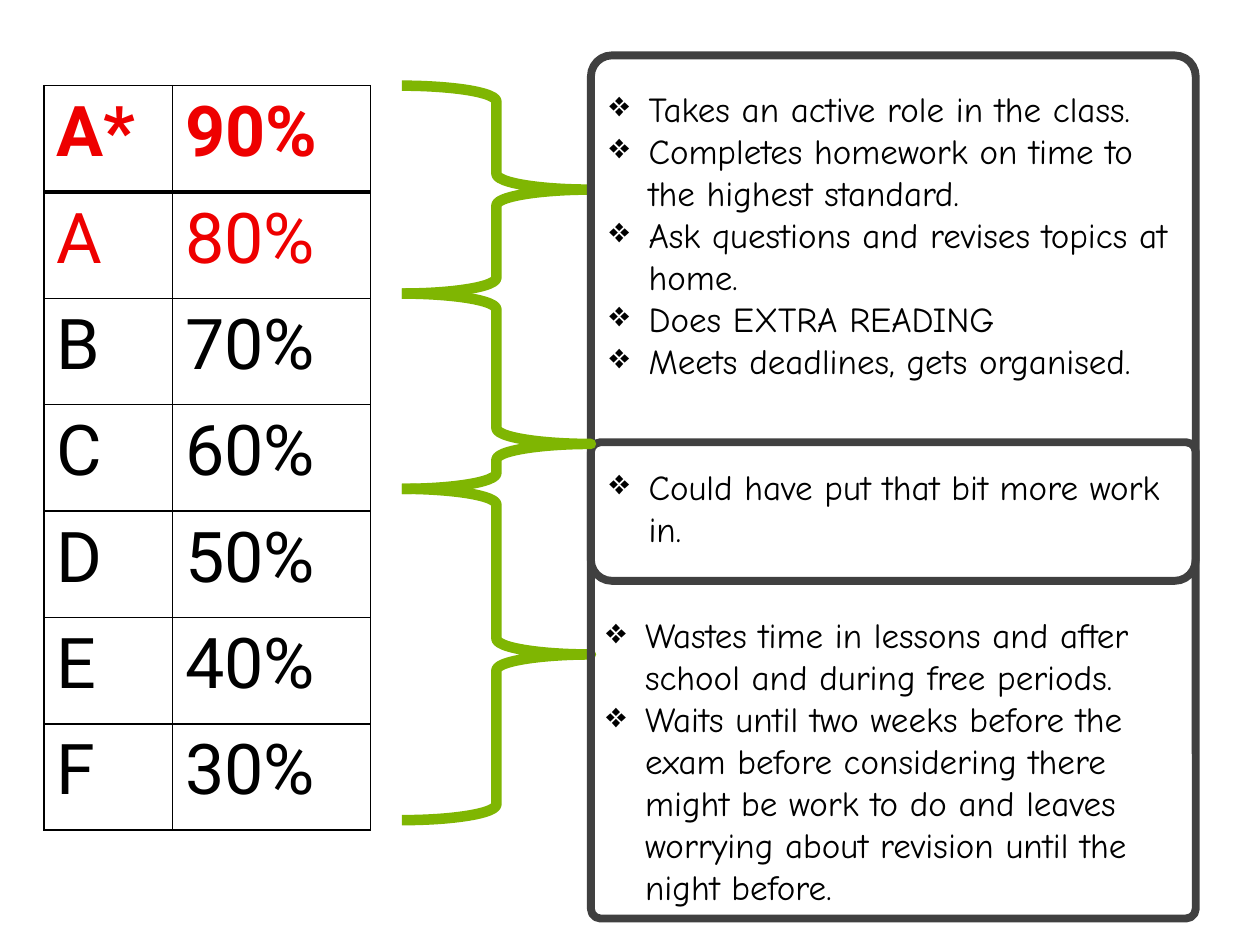
import dataclasses

import lxml.etree
import pptx
import pptx.dml.color
import pptx.enum.shapes
import pptx.enum.text
import pptx.oxml.ns
import pptx.util

Inches = pptx.util.Inches
Pt = pptx.util.Pt
MSO_SHAPE = pptx.enum.shapes.MSO_SHAPE
MSO_ANCHOR = pptx.enum.text.MSO_ANCHOR

BLACK, WHITE, RED = "000000", "FFFFFF", "EE0000"
GREEN, GREY = "7FB602", "404040"
BRACE_LEFT, BRACE_WIDTH = 3.19, 1.5
BOX_LEFT, BOX_WIDTH = 4.69, 4.8
BULLET_INDENT = 0.31


@dataclasses.dataclass
class Grade:
    letter: str
    percent: str
    color: str = BLACK
    bold: bool = False


@dataclasses.dataclass
class Brace:
    top: float
    height: float
    point: float = 0.5


@dataclasses.dataclass
class Advice:
    text: str
    space_before: float = 0


@dataclasses.dataclass
class Box:
    top: float
    height: float
    corner: float
    fill: str | None
    frame_format: dict
    advice: list[Advice]


GRADES = [
    Grade("A*", "90%", RED, True),
    Grade("A", "80%", RED),
    Grade("B", "70%"),
    Grade("C", "60%"),
    Grade("D", "50%"),
    Grade("E", "40%"),
    Grade("F", "30%"),
]
TOP_BRACE = Brace(0.68, 1.65)
MIDDLE_BRACE = Brace(2.33, 1.55, 0.77)
BOTTOM_BRACE = Brace(3.88, 2.63)
BOXES = [
    Box(0.44, 4.17, 0.04, WHITE, {"vertical_anchor": MSO_ANCHOR.MIDDLE}, [
        Advice("Takes an active role in the class."),
        Advice("Completes homework on time to the highest standard."),
        Advice("Ask questions and revises topics at home."),
        Advice("Does EXTRA READING"),
        Advice("Meets deadlines, gets organised."),
        Advice("Could have put that bit more work in.", 48),
    ]),
    Box(3.51, 3.78, 0.02, None,
        {"vertical_anchor": MSO_ANCHOR.TOP, "margin_top": Inches(1.34)}, [
            Advice("Wastes time in lessons and after school and during free periods."),
            Advice("Waits until two weeks before the exam before considering there "
                   "might be work to do and leaves worrying about revision until "
                   "the night before."),
        ]),
]


def rgb(color: str) -> pptx.dml.color.RGBColor:
    return pptx.dml.color.RGBColor.from_string(color)


def apply_format(target, values: dict) -> None:
    for name, value in values.items():
        setattr(target, name, value)


def add_text(paragraph, text: str, color: str, font_format: dict) -> None:
    run = paragraph.add_run()
    run.text = text
    apply_format(run.font, font_format)
    run.font.color.rgb = rgb(color)


def add_outlined_shape(slide, kind, left: float, top: float, width: float,
                       height: float, line_color: str, line_width: float):
    shape = slide.shapes.add_shape(
        kind, Inches(left), Inches(top), Inches(width), Inches(height))
    shape.shadow.inherit = False
    shape.fill.background()
    shape.line.color.rgb = rgb(line_color)
    shape.line.width = Pt(line_width)
    return shape


def add_cell_borders(cell, widths: dict[str, float]) -> None:
    properties = cell._tc.get_or_add_tcPr()
    for position, (side, width) in enumerate(widths.items()):
        line = lxml.etree.Element(pptx.oxml.ns.qn(f"a:ln{side}"), w=str(Pt(width)))
        fill = lxml.etree.SubElement(line, pptx.oxml.ns.qn("a:solidFill"))
        lxml.etree.SubElement(fill, pptx.oxml.ns.qn("a:srgbClr"), val=BLACK)
        properties.insert(position, line)


def add_grade_table(slide, grades: list[Grade]) -> None:
    widths = [1.02, 1.57]
    height = 5.91
    table = slide.shapes.add_table(
        len(grades), len(widths), Inches(0.35), Inches(0.68),
        Inches(sum(widths)), Inches(height)).table
    apply_format(table, {"first_row": False, "horz_banding": False})
    for column, width in zip(table.columns, widths):
        column.width = Inches(width)
    for index, grade in enumerate(grades):
        table.rows[index].height = Inches(height / len(grades))
        # The line under the top grade is heavier
        borders = {"L": 1, "R": 1, "T": 2 if index == 1 else 1,
                   "B": 2 if index == 0 else 1}
        for cell, text in zip(table.rows[index].cells, (grade.letter, grade.percent)):
            cell.fill.solid()
            cell.fill.fore_color.rgb = rgb(WHITE)
            add_cell_borders(cell, borders)
            add_text(cell.text_frame.paragraphs[0], text, grade.color,
                     {"name": "Roboto", "size": Pt(40), "bold": grade.bold})


def add_brace(slide, brace: Brace) -> None:
    shape = add_outlined_shape(slide, MSO_SHAPE.RIGHT_BRACE, BRACE_LEFT, brace.top,
                               BRACE_WIDTH, brace.height, GREEN, 6)
    shape.adjustments[1] = brace.point


def add_bullet(paragraph) -> None:
    properties = paragraph._p.get_or_add_pPr()
    properties.set("marL", str(Inches(BULLET_INDENT)))
    properties.set("indent", str(-Inches(BULLET_INDENT)))
    lxml.etree.SubElement(properties, pptx.oxml.ns.qn("a:buChar"), char="❖")


def add_advice_box(slide, box: Box) -> None:
    shape = add_outlined_shape(slide, MSO_SHAPE.ROUNDED_RECTANGLE, BOX_LEFT, box.top,
                               BOX_WIDTH, box.height, GREY, 4.5)
    shape.adjustments[0] = box.corner
    if box.fill:
        shape.fill.solid()
        shape.fill.fore_color.rgb = rgb(box.fill)
    frame = shape.text_frame
    apply_format(frame, {"word_wrap": True, **box.frame_format})
    for index, advice in enumerate(box.advice):
        paragraph = frame.add_paragraph() if index else frame.paragraphs[0]
        apply_format(paragraph, {"alignment": pptx.enum.text.PP_ALIGN.LEFT,
                                 "space_before": Pt(advice.space_before)})
        add_bullet(paragraph)
        add_text(paragraph, advice.text, BLACK,
                 {"name": "Comic Neue", "size": Pt(20)})


def main() -> None:
    presentation = pptx.Presentation()
    apply_format(presentation, {"slide_width": Inches(10), "slide_height": Inches(7.5)})
    slide = presentation.slides.add_slide(presentation.slide_layouts[6])

    # Grades and their percentages
    add_grade_table(slide, GRADES)

    # Outer braces lie behind the boxes, the middle one in front
    add_brace(slide, TOP_BRACE)
    add_brace(slide, BOTTOM_BRACE)
    for box in BOXES:
        add_advice_box(slide, box)
    add_brace(slide, MIDDLE_BRACE)

    presentation.save("out.pptx")


if __name__ == "__main__":
    main()
